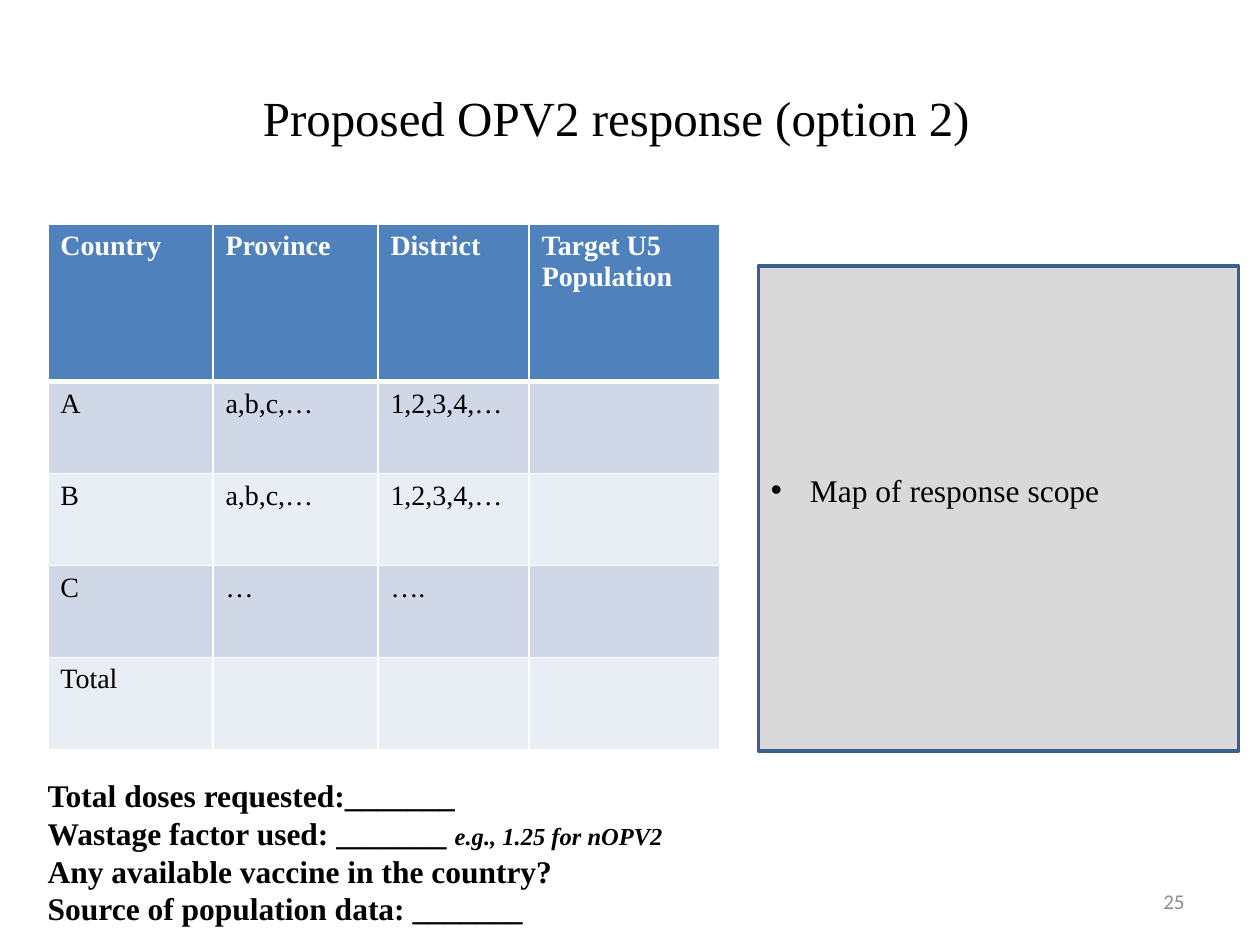
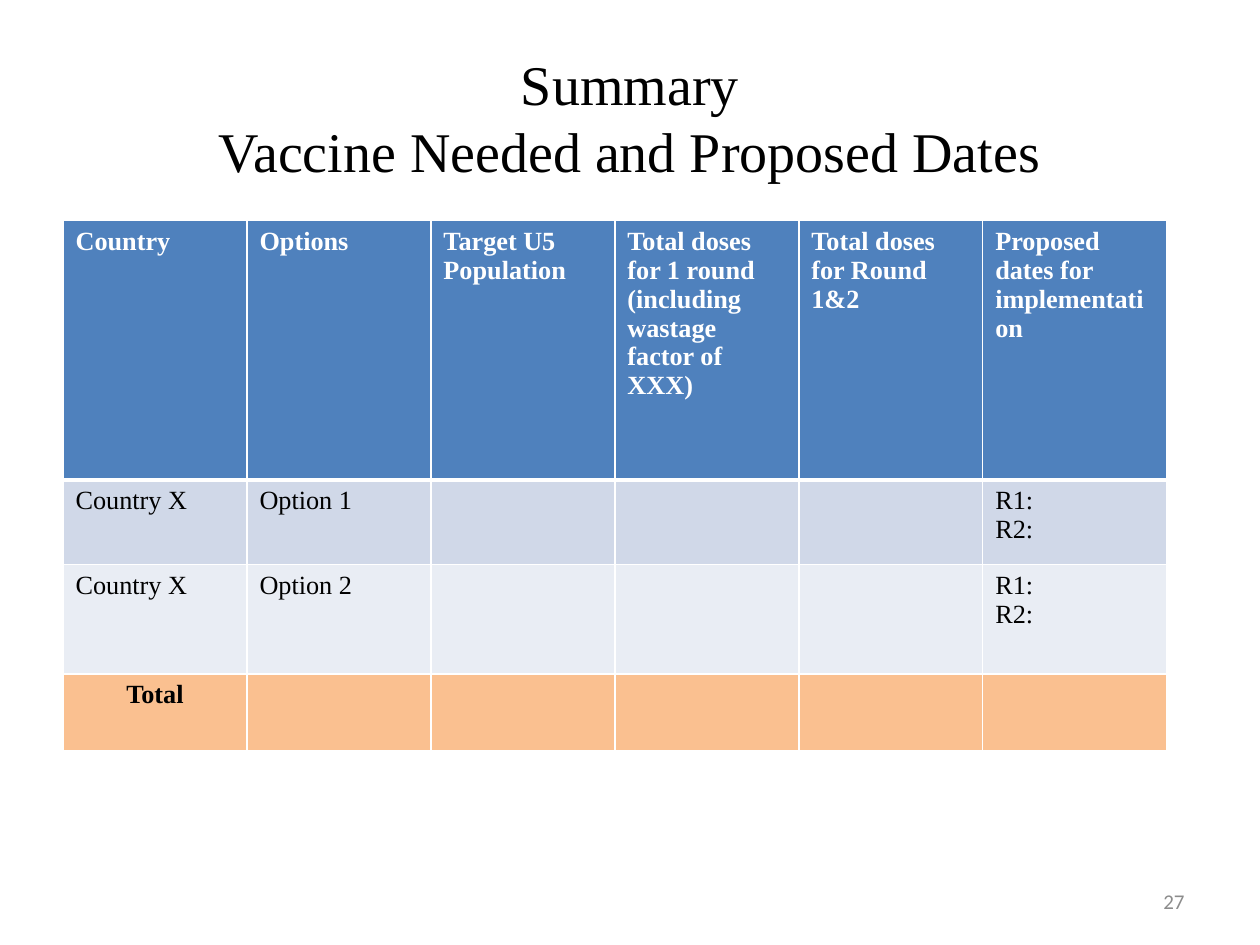
from dataclasses import dataclass

from lxml.etree import SubElement
from pptx import Presentation
from pptx.dml.color import RGBColor
from pptx.enum.shapes import MSO_SHAPE
from pptx.enum.text import MSO_ANCHOR as ANCHOR, PP_ALIGN as ALIGN
from pptx.oxml import parse_xml
from pptx.oxml.ns import nsdecls, qn
from pptx.util import Inches, Pt


@dataclass(frozen=True)
class Theme:
    font: str = "Times New Roman"
    number_font: str = "Calibri"
    text: str = "000000"
    white: str = "FFFFFF"
    number: str = "8C8C8C"
    header: str = "4F81BD"
    bands: tuple = ("D0D8E8", "E9EDF4")
    total: str = "FAC090"
    panel: str = "D9D9D9"
    panel_line: str = "3A5F8C"
    body_size: int = 18
    hint_size: int = 14
    number_size: int = 12


T = Theme()


def rgb(color):
    return RGBColor.from_string(color)


def write(tf, lines, size=T.body_size, font=T.font, color=T.text,
          bold=False, align=ALIGN.LEFT, anchor=ANCHOR.TOP):
    """Fill a text frame; a line is a string or a list of (text, size, italic)."""
    tf.word_wrap = True
    tf.vertical_anchor = anchor
    for i, line in enumerate(lines):
        p = tf.add_paragraph() if i else tf.paragraphs[0]
        p.alignment = align
        runs = [(line, size, False)] if isinstance(line, str) else line
        for text, run_size, italic in runs:
            r = p.add_run()
            r.text = text
            r.font.name, r.font.size = font, Pt(run_size)
            r.font.bold, r.font.italic = bold, italic
            r.font.color.rgb = rgb(color)


def add_text(slide, x, y, w, h, lines, **fmt):
    box = slide.shapes.add_textbox(Inches(x), Inches(y), Inches(w), Inches(h))
    write(box.text_frame, lines, **fmt)


def add_title(slide, lines, size, x, w):
    add_text(slide, x, 0.3, w, 1.25, lines, size=size,
             align=ALIGN.CENTER, anchor=ANCHOR.MIDDLE)


def add_page_number(slide, number):
    add_text(slide, 7.17, 6.95, 2.33, 0.4, [str(number)], size=T.number_size,
             font=T.number_font, color=T.number, align=ALIGN.RIGHT,
             anchor=ANCHOR.MIDDLE)


def set_borders(cell, top, bottom):
    tcPr = cell._tc.get_or_add_tcPr()
    for i, (side, width) in enumerate(zip("LRTB", (1, 1, top, bottom))):
        tcPr.insert(i, parse_xml(
            f'<a:ln{side} {nsdecls("a")} w="{Pt(width)}"><a:solidFill>'
            f'<a:srgbClr val="{T.white}"/></a:solidFill></a:ln{side}>'))


def add_table(slide, x, y, widths, heights, rows, size, total_row=False):
    """Table with a blue header, banded body and an optional total row."""
    frame = slide.shapes.add_table(len(rows), len(widths), Inches(x), Inches(y),
                                   Inches(sum(widths)), Inches(sum(heights)))
    table = frame.table
    for column, width in zip(table.columns, widths):
        column.width = Inches(width)
    for i, (height, row) in enumerate(zip(heights, rows)):
        table.rows[i].height = Inches(height)
        is_header = i == 0
        is_total = total_row and i == len(rows) - 1
        fill = T.header if is_header else T.total if is_total else T.bands[(i - 1) % 2]
        for cell, text in zip(table.rows[i].cells, row):
            cell.fill.solid()
            cell.fill.fore_color.rgb = rgb(fill)
            set_borders(cell, top=3 if i == 1 else 1, bottom=3 if is_header else 1)
            if text:
                write(cell.text_frame, text.split("\n"), size=size,
                      color=T.white if is_header else T.text,
                      bold=is_header or is_total,
                      align=ALIGN.CENTER if is_total else ALIGN.LEFT)


def add_bullet_panel(slide, x, y, w, h, text):
    sp = slide.shapes.add_shape(MSO_SHAPE.RECTANGLE, Inches(x), Inches(y),
                                Inches(w), Inches(h))
    sp.shadow.inherit = False
    sp.fill.solid()
    sp.fill.fore_color.rgb = rgb(T.panel)
    sp.line.color.rgb = rgb(T.panel_line)
    sp.line.width = Pt(2)
    tf = sp.text_frame
    tf.margin_bottom = Inches(0.34)  # lifts the label above the middle
    write(tf, [text], anchor=ANCHOR.MIDDLE)
    pPr = tf.paragraphs[0]._p.get_or_add_pPr()
    pPr.set("marL", str(Inches(0.31)))
    pPr.set("indent", str(-Inches(0.31)))
    SubElement(pPr, qn("a:buFont")).set("typeface", "Arial")
    SubElement(pPr, qn("a:buChar")).set("char", "•")


def build_response(slide):
    add_title(slide, ["Proposed OPV2 response (option 2)"], size=28, x=0.28, w=9.22)
    add_page_number(slide, 25)
    add_table(slide, 0.38, 1.78, [1.31, 1.31, 1.2, 1.51], [1.25] + [0.73] * 4, [
        ["Country", "Province", "District", "Target U5 Population"],
        ["A", "a,b,c,…", "1,2,3,4,…", ""],
        ["B", "a,b,c,…", "1,2,3,4,…", ""],
        ["C", "…", "….", ""],
        ["Total", "", "", ""],
    ], size=16)
    add_bullet_panel(slide, 6.02, 2.11, 3.81, 3.85, "Map of response scope")
    add_text(slide, 0.28, 6.11, 5.2, 1.3, [
        "Total doses requested:_______",
        [("Wastage factor used: _______ ", T.body_size, False),
         ("e.g., 1.25 for nOPV2", T.hint_size, True)],
        "Any available vaccine in the country?",
        "Source of population data: _______",
    ], bold=True)


def build_summary(slide):
    add_title(slide, ["Summary", "Vaccine Needed and Proposed Dates"],
              size=32, x=0.5, w=9)
    rounds = "R1:\nR2:"
    add_table(slide, 0.5, 1.75, [1.46] * 6, [2.06, 0.67, 0.87, 0.61], [
        ["Country", "Options", "Target U5 Population",
         "Total doses for 1 round (including wastage factor of XXX)",
         "Total doses for Round 1&2", "Proposed dates for implementation"],
        ["Country X", "Option 1", "", "", "", rounds],
        ["Country X", "Option 2", "", "", "", rounds],
        ["Total", "", "", "", "", ""],
    ], size=15, total_row=True)
    add_page_number(slide, 27)


def main():
    prs = Presentation()
    prs.slide_width, prs.slide_height = Inches(10), Inches(7.5)
    blank = prs.slide_layouts[6]
    for build in (build_response, build_summary):
        build(prs.slides.add_slide(blank))
    prs.save("out.pptx")


if __name__ == "__main__":
    main()
